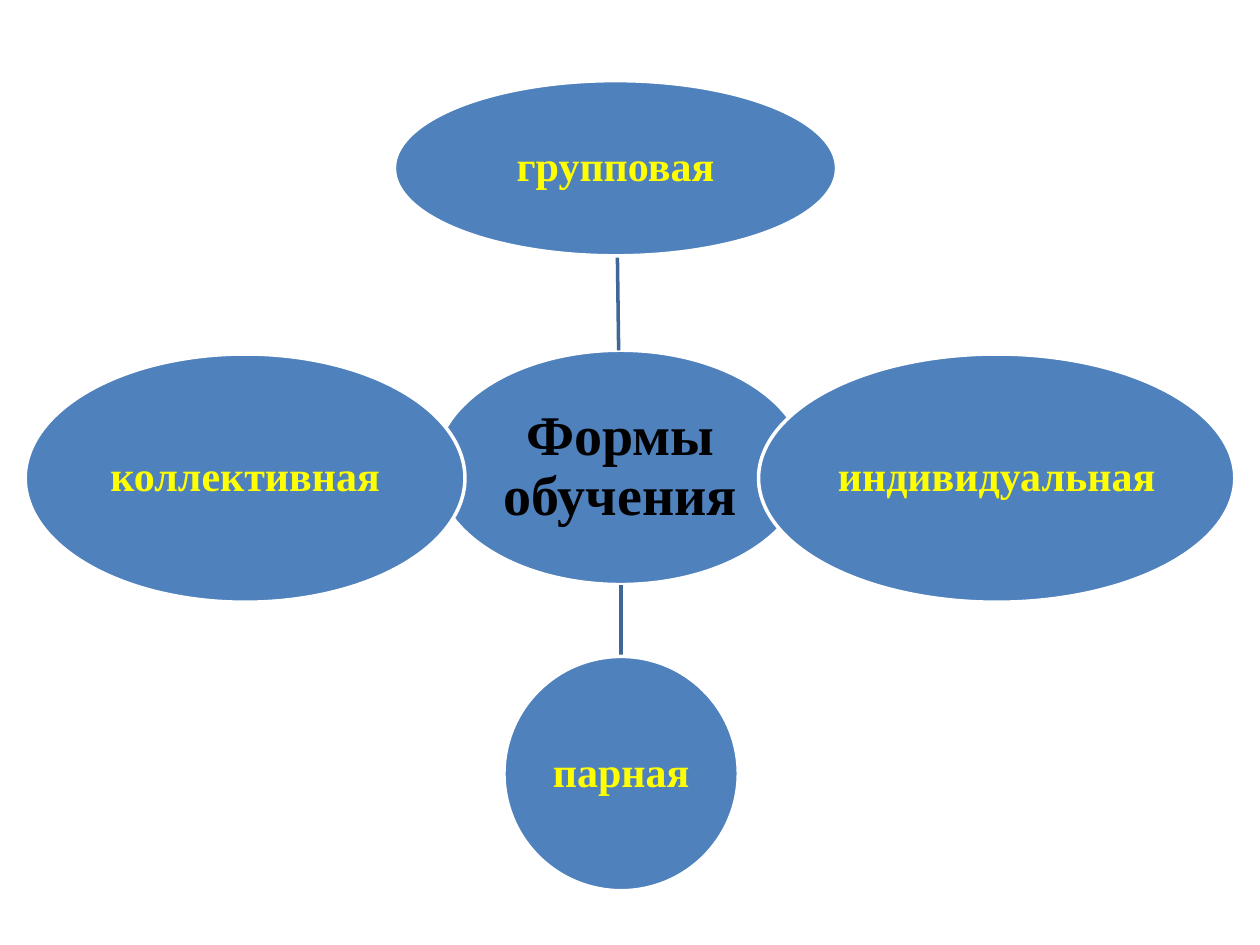
from lxml import etree
from pptx import Presentation
from pptx.dml.color import RGBColor
from pptx.enum.shapes import MSO_CONNECTOR, MSO_SHAPE
from pptx.enum.text import MSO_ANCHOR, PP_ALIGN
from pptx.oxml.ns import qn
from pptx.util import Inches, Pt

OVAL = MSO_SHAPE.OVAL
STRAIGHT = MSO_CONNECTOR.STRAIGHT
MIDDLE = MSO_ANCHOR.MIDDLE
CENTER = PP_ALIGN.CENTER

FONT = "Times New Roman"
COLORS = {
    "oval": "4F81BD",
    "outline": "FFFFFF",
    "link": "3F6797",
    "topic": "000000",
    "form": "FFFF00",
}

# text, (left, top, width, height) in inches
TOPIC = ("Формы обучения", (3.45, 2.78, 2.95, 1.86))
GROUP = ("групповая", (3.13, 0.64, 3.51, 1.39))
INDIVIDUAL = ("индивидуальная", (6.02, 2.81, 3.78, 1.97))
PAIR = ("парная", (4.0, 5.21, 1.86, 1.86))
COLLECTIVE = ("коллективная", (0.2, 2.81, 3.49, 1.97))
FORMS = [GROUP, INDIVIDUAL, PAIR, COLLECTIVE]

# x, y of both ends in inches
LINKS = [
    ((4.91, 2.78), (4.9, 2.03)),
    ((4.93, 4.64), (4.93, 5.21)),
]


def rgb(name):
    return RGBColor.from_string(COLORS[name])


def add_oval(slide, label, box, size, color):
    oval = slide.shapes.add_shape(OVAL, *map(Inches, box))
    oval.shadow.inherit = False
    oval.fill.solid()
    oval.fill.fore_color.rgb = rgb("oval")
    oval.line.color.rgb = rgb("outline")
    oval.line.width = Pt(2)

    frame = oval.text_frame
    frame.word_wrap = True
    frame.vertical_anchor = MIDDLE
    frame.margin_left = frame.margin_right = Inches(0.02)
    frame.margin_top = frame.margin_bottom = Inches(0.02)
    paragraph = frame.paragraphs[0]
    paragraph.alignment = CENTER
    paragraph.line_spacing = 0.9
    run = paragraph.add_run()
    run.text = label
    run.font.name = FONT
    run.font.size = Pt(size)
    run.font.bold = True
    run.font.color.rgb = rgb(color)


def add_link(slide, start, end):
    link = slide.shapes.add_connector(STRAIGHT, *map(Inches, start + end))
    link.line.color.rgb = rgb("link")
    link.line.width = Pt(2)
    etree.SubElement(link._element.spPr, qn("a:effectLst"))


def main():
    prs = Presentation()
    prs.slide_width, prs.slide_height = Inches(10), Inches(7.5)
    slide = prs.slides.add_slide(prs.slide_layouts[6])

    add_oval(slide, *TOPIC, 32, "topic")
    for start, end in LINKS:
        add_link(slide, start, end)
    for label, box in FORMS:
        add_oval(slide, label, box, 24, "form")

    prs.save("out.pptx")


if __name__ == "__main__":
    main()
